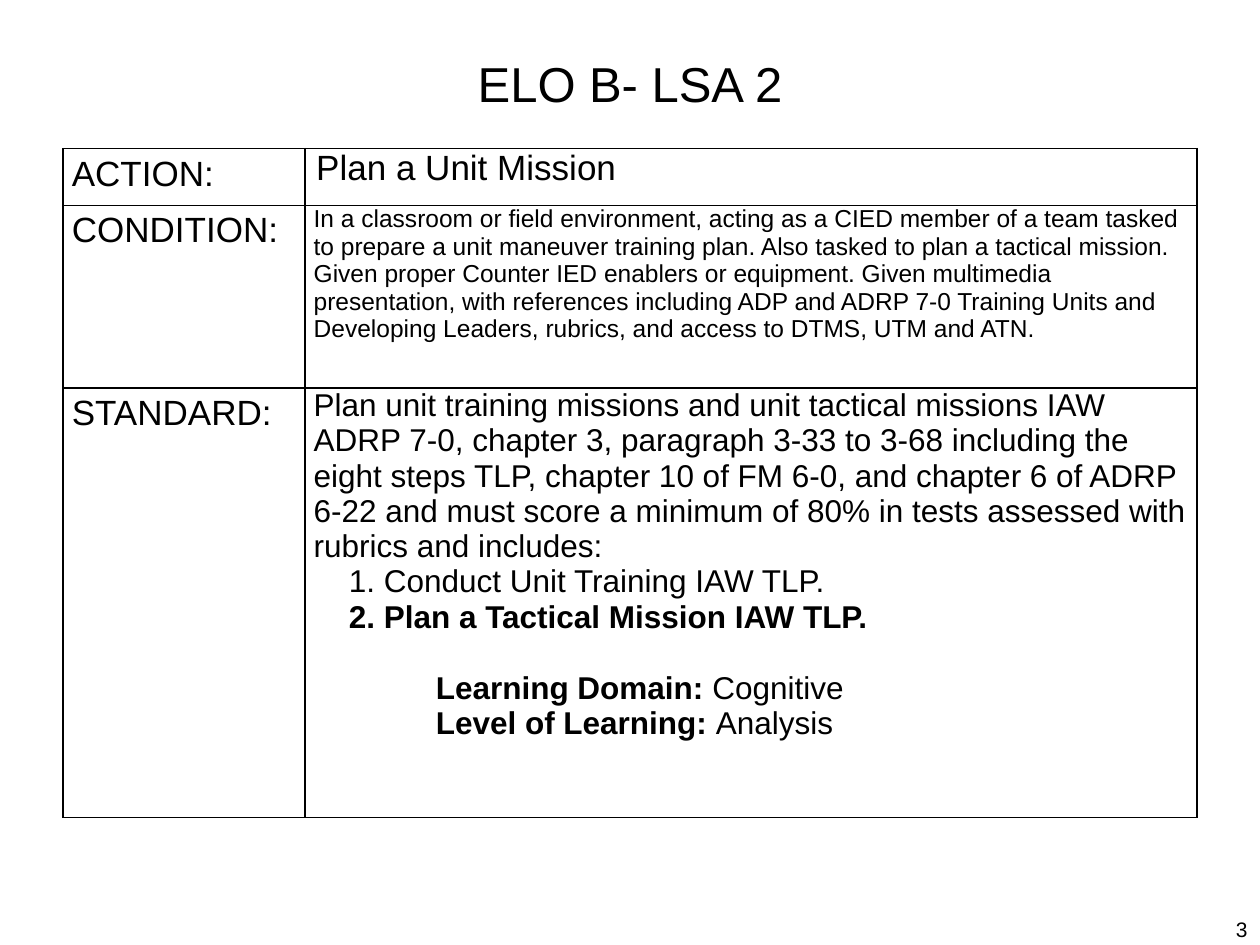
from lxml.etree import SubElement as Sub
from pptx import Presentation
from pptx.dml.color import RGBColor
from pptx.enum.text import MSO_ANCHOR as Anchor, PP_ALIGN as Align
from pptx.oxml.ns import qn
from pptx.util import Inches, Pt

INK = "000000"
PAPER = "FFFFFF"
COLS = [1.92, 7.08]
ROWS = [0.45, 1.45, 3.41]
LABELS = ["ACTION:", "CONDITION:", "STANDARD:"]
ACTION = "Plan a Unit Mission"
CONDITION = (
    "In a classroom or field environment, acting as a CIED member of a team tasked "
    "to prepare a unit maneuver training plan. Also tasked to plan a tactical mission. "
    "Given proper Counter IED enablers or equipment. Given multimedia presentation, "
    "with references including ADP and ADRP 7-0 Training Units and Developing Leaders, "
    "rubrics, and access to DTMS, UTM and ATN."
)
STANDARD = (
    "Plan unit training missions and unit tactical missions IAW ADRP 7-0, chapter 3, "
    "paragraph 3-33 to 3-68 including the eight steps TLP, chapter 10 of FM 6-0, and "
    "chapter 6 of ADRP 6-22 and must score a minimum of 80% in tests assessed with "
    "rubrics and includes:"
)
STEP = 0.28
NOTE = 0.97
LINES = [
    (STANDARD, "", 0, 0),
    ("1. Conduct Unit Training IAW TLP.", "", STEP, 0),
    ("", "2. Plan a Tactical Mission IAW TLP.", STEP, 0),
    ("Cognitive", "Learning Domain: ", NOTE, 20.5),
    ("Analysis", "Level of Learning: ", NOTE, 0),
]


def color(code):
    """Turn a hex string into a colour."""
    return RGBColor.from_string(code)


def style(run, size, bold=False):
    """Format one run."""
    font = run.font
    font.name, font.size, font.bold = "Arial", Pt(size), bold
    font.color.rgb = color(INK)


def write(para, text, size, lead="", left=0):
    """Fill a paragraph with an optional bold lead and plain text."""
    props = para._p.get_or_add_pPr()
    props.set("marL", str(Inches(left)))
    props.set("indent", "0")
    for part, bold in ((lead, True), (text, False)):
        if part:
            run = para.add_run()
            run.text = part
            style(run, size, bold)


def label(shape, box, text, size, align):
    """Place a shape and write its single line."""
    shape.left, shape.top, shape.width, shape.height = map(Inches, box)
    frame = shape.text_frame
    frame.word_wrap = True
    frame.vertical_anchor = Anchor.MIDDLE
    frame.text = text
    para = frame.paragraphs[0]
    para.alignment = align
    style(para.runs[0], size)


def border(cell):
    """Draw thin lines on all sides of a cell."""
    props = cell._tc.get_or_add_tcPr()
    for side in ("lnL", "lnR", "lnT", "lnB"):
        line = Sub(props, qn("a:" + side), w=str(Pt(1)))
        fill = Sub(line, qn("a:solidFill"))
        Sub(fill, qn("a:srgbClr"), val=INK)


def format_cell(cell):
    """Set the lines, fill and margins of a cell."""
    border(cell)
    cell.fill.solid()
    cell.fill.fore_color.rgb = color(PAPER)
    cell.margin_left = cell.margin_right = Inches(0.07)
    cell.margin_top = cell.margin_bottom = Inches(0)


def add_grid(slide):
    """Add the table and return it with its labels filled."""
    box = map(Inches, (0.5, 1.18, sum(COLS), sum(ROWS)))
    grid = slide.shapes.add_table(len(ROWS), len(COLS), *box).table
    grid.first_row = grid.horz_banding = False
    for col, width in zip(grid.columns, COLS):
        col.width = Inches(width)
    for row, height in zip(grid.rows, ROWS):
        row.height = Inches(height)
    for cell in grid.iter_cells():
        format_cell(cell)
    for i, text in enumerate(LABELS):
        para = grid.cell(i, 0).text_frame.paragraphs[0]
        para.line_spacing = 1.15
        write(para, text, 20)
    return grid


def fill_standard(frame):
    """Write the standard with its steps and notes."""
    for i, (text, lead, left, gap) in enumerate(LINES):
        para = frame.add_paragraph() if i else frame.paragraphs[0]
        if gap:
            para.space_before = Pt(gap)
        write(para, text, 18, lead, left)


def main():
    """Build the slide and save it."""
    deck = Presentation()
    deck.slide_width, deck.slide_height = Inches(10), Inches(7.5)
    slide = deck.slides.add_slide(deck.slide_layouts[5])
    label(slide.shapes.title, (0.5, 0.3, 9, 0.72), "ELO B- LSA 2", 28, Align.CENTER)
    box = (7.67, 7.25, 2.33, 0.25)
    label(slide.shapes.add_textbox(0, 0, 0, 0), box, "3", 12, Align.RIGHT)
    grid = add_grid(slide)
    write(grid.cell(0, 1).text_frame.paragraphs[0], ACTION, 20, left=0.02)
    write(grid.cell(1, 1).text_frame.paragraphs[0], CONDITION, 14)
    fill_standard(grid.cell(2, 1).text_frame)
    deck.save("out.pptx")


if __name__ == "__main__":
    main()
